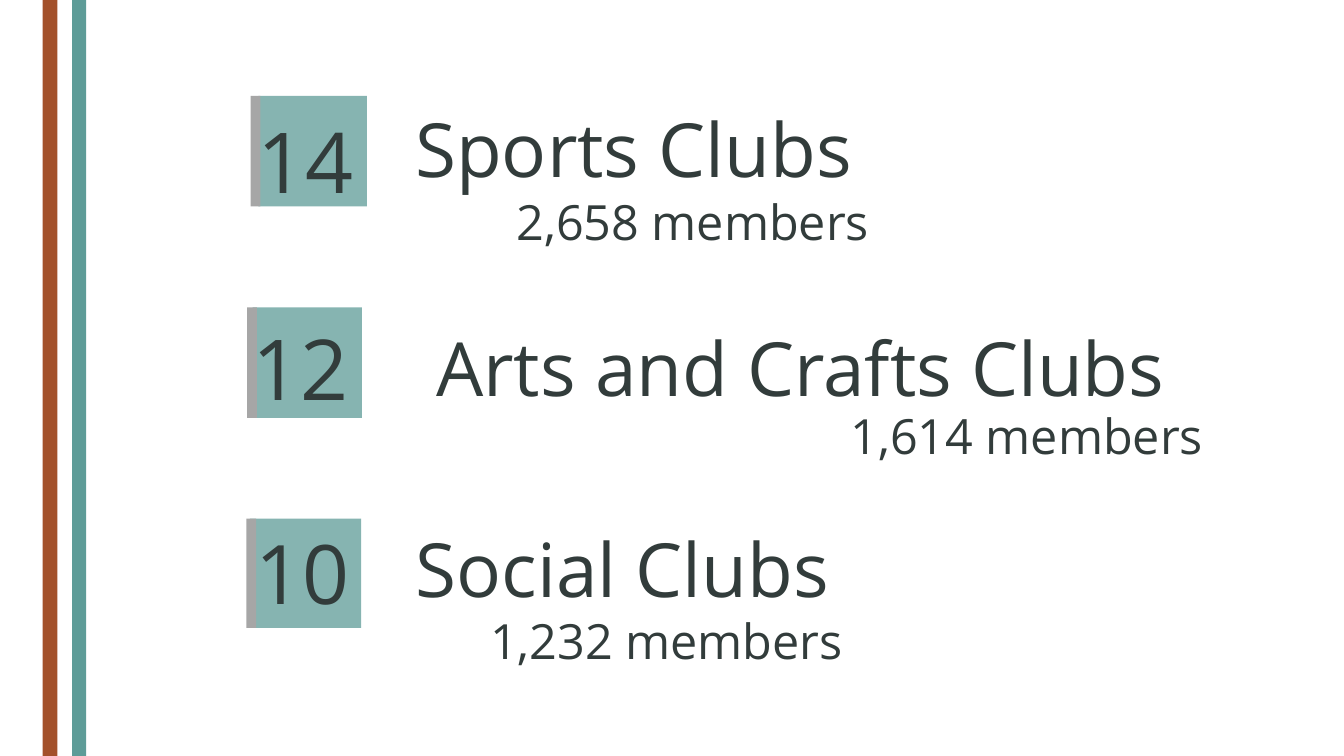
from dataclasses import dataclass

from pptx import Presentation
from pptx.dml.color import RGBColor
from pptx.enum.shapes import MSO_SHAPE
from pptx.enum.text import MSO_AUTO_SIZE, PP_ALIGN
from pptx.oxml.ns import qn
from pptx.slide import Slide
from pptx.util import Pt
from lxml.etree import SubElement

EMU_PER_PX = 9525
SLIDE_WIDTH, SLIDE_HEIGHT = 1920, 1080


@dataclass(frozen=True)
class Theme:
    teal: str = "5E9C98"
    rust: str = "A3512B"
    gray: str = "A6A6A6"
    ink: str = "323C3B"
    font: str = "Open Sans"
    heading_size: int = 80
    members_size: int = 52
    line_spacing: float = 1.4
    badge_opacity: int = 75


@dataclass(frozen=True)
class Box:
    left: int
    top: int
    width: int
    height: int

    def emu(self) -> tuple[int, ...]:
        return tuple(
            length * EMU_PER_PX
            for length in (self.left, self.top, self.width, self.height)
        )


@dataclass(frozen=True)
class ClubGroup:
    count: str
    count_size: int
    count_box: Box
    badge: Box
    accent_left: int
    heading: str
    heading_box: Box
    members: str
    members_box: Box


THEME = Theme()
ACCENT_WIDTH = 14

STRIPES = [
    (Box(103, 0, 20, SLIDE_HEIGHT), THEME.teal),
    (Box(61, 0, 21, SLIDE_HEIGHT), THEME.rust),
]

CLUB_GROUPS = [
    ClubGroup("14", 90, Box(364, 132, 145, 170), Box(369, 137, 155, 158), 358,
              "Sports Clubs", Box(564, 126, 683, 144),
              "2,658 members", Box(728, 260, 524, 93)),
    ClubGroup("12", 90, Box(358, 428, 143, 170), Box(361, 439, 156, 158), 353,
              "Arts and Crafts Clubs", Box(564, 438, 1160, 144),
              "1,614 members", Box(1205, 566, 524, 93)),
    ClubGroup("10", 88, Box(364, 723, 137, 158), Box(357, 741, 159, 156), 352,
              "Social Clubs", Box(564, 725, 651, 144),
              "1,232 members", Box(690, 859, 524, 93)),
]


def add_rectangle(slide: Slide, box: Box, color: str, opacity: int = 100) -> None:
    shape = slide.shapes.add_shape(MSO_SHAPE.RECTANGLE, *box.emu())
    shape.shadow.inherit = False
    shape.line.fill.background()
    shape.fill.solid()
    shape.fill.fore_color.rgb = RGBColor.from_string(color)
    if opacity < 100:
        color_element = shape.fill._xPr.find(qn("a:solidFill"))[0]
        SubElement(color_element, qn("a:alpha"), val=str(opacity * 1000))


def add_text(slide: Slide, box: Box, text: str, *, size: int,
             color: str = THEME.ink, font: str = THEME.font) -> None:
    frame = slide.shapes.add_textbox(*box.emu()).text_frame
    frame.margin_left = frame.margin_top = 0
    frame.margin_right = frame.margin_bottom = 0
    frame.word_wrap = True
    frame.auto_size = MSO_AUTO_SIZE.SHAPE_TO_FIT_TEXT
    paragraph = frame.paragraphs[0]
    paragraph.alignment = PP_ALIGN.CENTER
    paragraph.line_spacing = Pt(size * THEME.line_spacing)
    run = paragraph.add_run()
    run.text = text
    run.font.name = font
    run.font.size = Pt(size)
    run.font.color.rgb = RGBColor.from_string(color)


def add_club_group(slide: Slide, group: ClubGroup) -> None:
    # Badge with its count and left accent
    badge = group.badge
    add_rectangle(slide, badge, THEME.teal, THEME.badge_opacity)
    add_text(slide, group.count_box, group.count, size=group.count_size)
    accent = Box(group.accent_left, badge.top, ACCENT_WIDTH, badge.height)
    add_rectangle(slide, accent, THEME.gray)

    # Heading and membership
    add_text(slide, group.heading_box, group.heading, size=THEME.heading_size)
    add_text(slide, group.members_box, group.members, size=THEME.members_size)


def main() -> None:
    presentation = Presentation()
    presentation.slide_width = SLIDE_WIDTH * EMU_PER_PX
    presentation.slide_height = SLIDE_HEIGHT * EMU_PER_PX
    blank_layout = presentation.slide_layouts[6]
    slide = presentation.slides.add_slide(blank_layout)

    # Vertical stripes
    for box, color in STRIPES:
        add_rectangle(slide, box, color)

    # Club groups
    for group in CLUB_GROUPS:
        add_club_group(slide, group)

    presentation.save("out.pptx")


if __name__ == "__main__":
    main()
